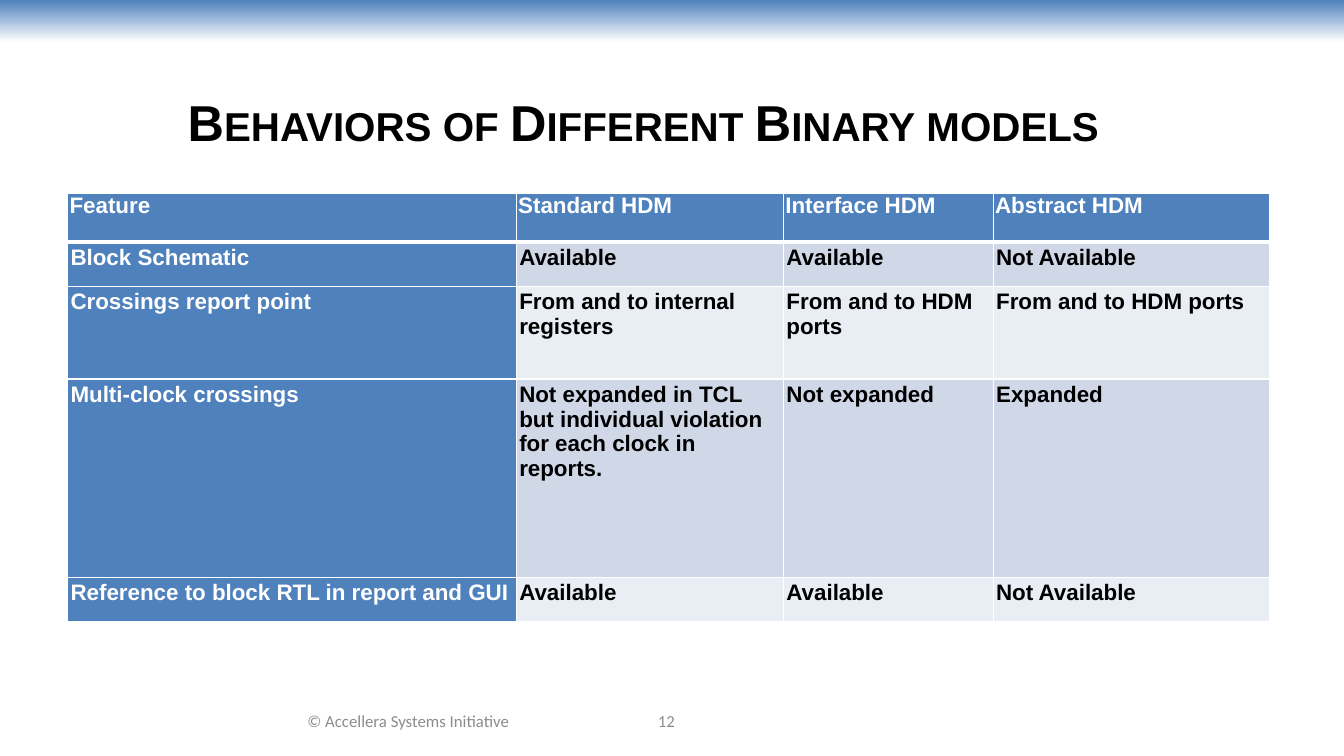
from dataclasses import dataclass

from lxml.etree import SubElement
from pptx import Presentation
from pptx.dml.color import RGBColor
from pptx.enum.shapes import MSO_SHAPE
from pptx.enum.text import MSO_ANCHOR, MSO_AUTO_SIZE, PP_ALIGN
from pptx.oxml.ns import qn
from pptx.util import Emu, Pt

EMU_PER_PX = 9144


@dataclass(frozen=True)
class Theme:
    blue: str = "4F81BD"
    white: str = "FFFFFF"
    black: str = "000000"
    grey: str = "8C8C8C"
    bands: tuple = ("D0D8E8", "E9EDF4")
    heading_font: str = "Arial"
    footer_font: str = "Calibri"
    title_size: int = 36
    table_size: int = 16
    footer_size: int = 12


THEME = Theme()

COLUMN_WIDTHS = (445, 265, 208, 274)
ROW_HEIGHTS = (48, 44, 92, 197, 44)
FEATURES = (
    ("Feature", "Standard HDM", "Interface HDM", "Abstract HDM"),
    ("Block Schematic", "Available", "Available", "Not Available"),
    ("Crossings report point", "From and to internal registers",
     "From and to HDM ports", "From and to HDM ports"),
    ("Multi-clock crossings",
     "Not expanded in TCL but individual violation for each clock in reports.",
     "Not expanded", "Expanded"),
    ("Reference to block RTL in report and GUI", "Available", "Available", "Not Available"),
)


def px(length):
    return Emu(length * EMU_PER_PX)


def color(value):
    return RGBColor.from_string(value)


def write_text(text_frame, text, *, size, fill, font=THEME.heading_font, bold=False,
               small_caps=False, align=PP_ALIGN.LEFT, line_spacing=None, space_after=0):
    paragraph = text_frame.paragraphs[0]
    paragraph.alignment = align
    paragraph.space_before = Pt(0)
    paragraph.space_after = Pt(space_after)
    if line_spacing:
        paragraph.line_spacing = line_spacing
    run = paragraph.add_run()
    run.text = text
    run.font.name = font
    run.font.size = Pt(size)
    run.font.bold = bold
    run.font.color.rgb = color(fill)
    if small_caps:
        run.font._element.set("cap", "small")


def add_band(slide, left, top, width, height):
    band = slide.shapes.add_shape(MSO_SHAPE.RECTANGLE, px(left), px(top), px(width), px(height))
    band.shadow.inherit = False
    band.line.fill.background()
    band.fill.gradient()
    band.fill.gradient_angle = 270
    for stop, value in zip(band.fill.gradient_stops, (THEME.blue, THEME.white)):
        stop.color.rgb = color(value)


def place_title(slide, text, left, top, width, height):
    title = slide.shapes.title
    title.left, title.top, title.width, title.height = map(px, (left, top, width, height))
    text_frame = title.text_frame
    text_frame.word_wrap = True
    text_frame.auto_size = MSO_AUTO_SIZE.NONE
    text_frame.vertical_anchor = MSO_ANCHOR.TOP
    write_text(text_frame, text, size=THEME.title_size, fill=THEME.black, bold=True,
               small_caps=True, align=PP_ALIGN.CENTER, line_spacing=0.9, space_after=6)


def set_borders(cell, bottom):
    properties = cell._tc.get_or_add_tcPr()
    for side, points in (("L", 1), ("R", 1), ("T", 1), ("B", bottom)):
        line = SubElement(properties, qn(f"a:ln{side}"), w=str(Pt(points)))
        SubElement(SubElement(line, qn("a:solidFill")), qn("a:srgbClr"), val=THEME.white)


def format_cell(cell, text, row, column):
    header = row == 0
    labelled = header or column == 0
    side, edge = (2, 0) if header else (3, 3)
    cell.margin_left = cell.margin_right = px(side)
    cell.margin_top = cell.margin_bottom = px(edge)
    set_borders(cell, bottom=3 if header else 1)
    cell.fill.solid()
    cell.fill.fore_color.rgb = color(THEME.blue if labelled else THEME.bands[(row - 1) % 2])
    write_text(cell.text_frame, text, size=THEME.table_size, bold=True, space_after=3,
               fill=THEME.white if labelled else THEME.black)


def add_feature_table(slide, left, top):
    frame = slide.shapes.add_table(len(ROW_HEIGHTS), len(COLUMN_WIDTHS), px(left), px(top),
                                   px(sum(COLUMN_WIDTHS)), px(sum(ROW_HEIGHTS)))
    table = frame.table
    table.first_col = True
    for column, width in zip(table.columns, COLUMN_WIDTHS):
        column.width = px(width)
    for row, height in zip(table.rows, ROW_HEIGHTS):
        row.height = px(height)
    for row, texts in enumerate(FEATURES):
        for column, text in enumerate(texts):
            format_cell(table.cell(row, column), text, row, column)


def add_footer_text(slide, text, left, top, width, height):
    box = slide.shapes.add_textbox(px(left), px(top), px(width), px(height))
    box.text_frame.word_wrap = True
    box.text_frame.vertical_anchor = MSO_ANCHOR.MIDDLE
    write_text(box.text_frame, text, size=THEME.footer_size, fill=THEME.grey,
               font=THEME.footer_font, align=PP_ALIGN.CENTER)


def add_footer(slide, left, top, height):
    add_footer_text(slide, "© Accellera Systems Initiative", left, top, 322, height)
    add_footer_text(slide, "12", left + 289, top, 256, height)


def build_comparison_slide(presentation):
    slide = presentation.slides.add_slide(presentation.slide_layouts[5])
    add_band(slide, 0, 0, 1333, 42)
    place_title(slide, "Behaviors of Different Binary models", 92, 92, 1092, 113)
    add_feature_table(slide, 67, 192)
    add_footer(slide, 244, 695, 40)


def main():
    presentation = Presentation()
    presentation.slide_width = px(1333)
    presentation.slide_height = px(750)
    build_comparison_slide(presentation)
    presentation.save("out.pptx")


if __name__ == "__main__":
    main()
